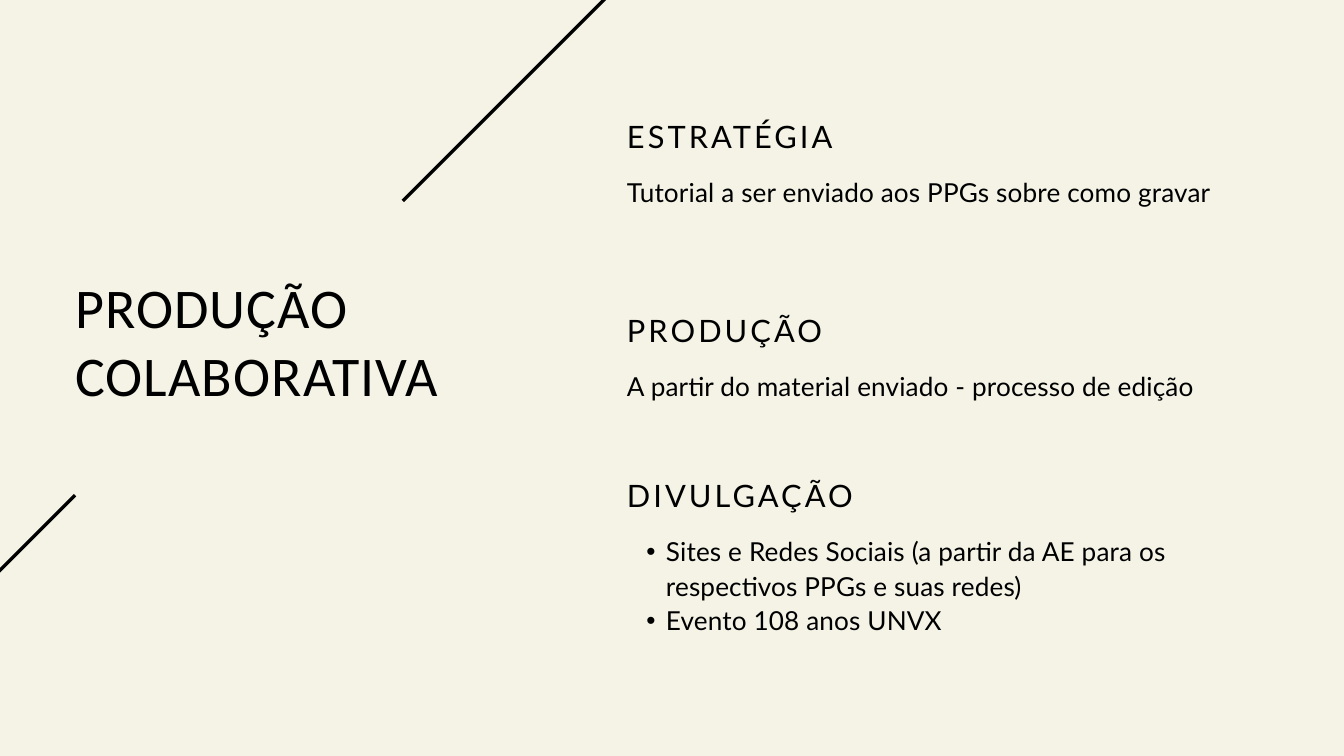
import pptx
import pptx.dml.color
import pptx.enum.shapes
import pptx.enum.text
import pptx.oxml
import pptx.oxml.ns
import pptx.util

CREAM = pptx.dml.color.RGBColor(0xF4, 0xF3, 0xE6)
BLACK = pptx.dml.color.RGBColor(0x00, 0x00, 0x00)

# Grid of one-inch cells
COLS, ROWS = 20, 11.25
TEXT_COL, TEXT_COLS = 9.33, 9.29
BODY_DROP = 0.92  # rows from a heading to its body


class Deck:
    """Holds the style and the current slide; positions are columns and rows."""

    # font, size, line spacing, letter spacing (all in points)
    TITLE = ("Calibri", 60, 72, 1.2)
    HEADING = ("Lato", 33, 46.2, 3.3)
    BODY = ("Lato", 28, 37.1, 0.2)

    def __init__(self):
        self.prs = pptx.Presentation()
        self.prs.slide_width = pptx.util.Inches(COLS)
        self.prs.slide_height = pptx.util.Inches(ROWS)
        self.s = None

    def add_slide(self, color):
        self.s = self.prs.slides.add_slide(self.prs.slide_layouts[6])
        fill = self.s.background.fill
        fill.solid()
        fill.fore_color.rgb = color

    def box(self, col, row, cols, rows):
        w = self.prs.slide_width / COLS
        h = self.prs.slide_height / ROWS
        return int(col * w), int(row * h), int(cols * w), int(rows * h)

    def text(self, col, row, cols, rows, lines, style, bullets=False):
        font, size, leading, tracking = style
        tf = self.s.shapes.add_textbox(*self.box(col, row, cols, rows)).text_frame
        tf.word_wrap = True
        tf.auto_size = pptx.enum.text.MSO_AUTO_SIZE.SHAPE_TO_FIT_TEXT
        tf.margin_left = tf.margin_right = tf.margin_top = tf.margin_bottom = 0
        tf.text = "\n".join(lines)
        for p in tf.paragraphs:
            p.line_spacing = pptx.util.Pt(leading)
            if bullets:
                self.bullet(p)
            for r in p.runs:
                r.font.name = font
                r.font.size = pptx.util.Pt(size)
                r.font.color.rgb = BLACK
                r._r.get_or_add_rPr().set("spc", str(round(tracking * 100)))

    def bullet(self, p):
        p.level = 1
        pPr = p._p.get_or_add_pPr()
        pPr.set("marL", str(pptx.util.Inches(0.58)))
        pPr.set("indent", str(pptx.util.Inches(-0.29)))
        ns = pptx.oxml.ns.nsdecls("a")
        pPr.append(pptx.oxml.parse_xml(f'<a:buFont {ns} typeface="Arial"/>'))
        pPr.append(pptx.oxml.parse_xml(f'<a:buChar {ns} char="•"/>'))

    def diagonal(self, col, row):
        sp = self.s.shapes.add_shape(
            pptx.enum.shapes.MSO_SHAPE.RECTANGLE, *self.box(col, row, 0.05, 6.96))
        sp.rotation = 45
        sp.shadow.inherit = False
        sp.fill.solid()
        sp.fill.fore_color.rgb = BLACK
        sp.line.fill.background()

    def section(self, row, heading, lines, body_rows=0.49, bullets=False):
        self.text(TEXT_COL, row, TEXT_COLS, 0.6, [heading], self.HEADING)
        self.text(TEXT_COL, row + BODY_DROP, TEXT_COLS, body_rows, lines,
                  self.BODY, bullets)


def main():
    deck = Deck()
    deck.add_slide(CREAM)

    # Sections on the right
    deck.section(1.66, "ESTRATÉGIA",
                 ["Tutorial a ser enviado aos PPGs sobre como gravar"])
    deck.section(4.55, "PRODUÇÃO",
                 ["A partir do material enviado - processo de edição"])
    deck.section(7, "DIVULGAÇÃO",
                 ["Sites e Redes Sociais (a partir da AE para os respectivos "
                  "PPGs e suas redes)",
                  "Evento 108 anos UNVX"],
                 body_rows=1.53, bullets=True)

    # Title on the left
    deck.text(1.12, 4.06, 7.83, 2.02, ["PRODUÇÃO COLABORATIVA"], deck.TITLE)

    # Diagonal bars running off the edges
    deck.diagonal(8.43, -2.95)
    deck.diagonal(-1.37, 6.35)

    deck.prs.save("out.pptx")


if __name__ == "__main__":
    main()
